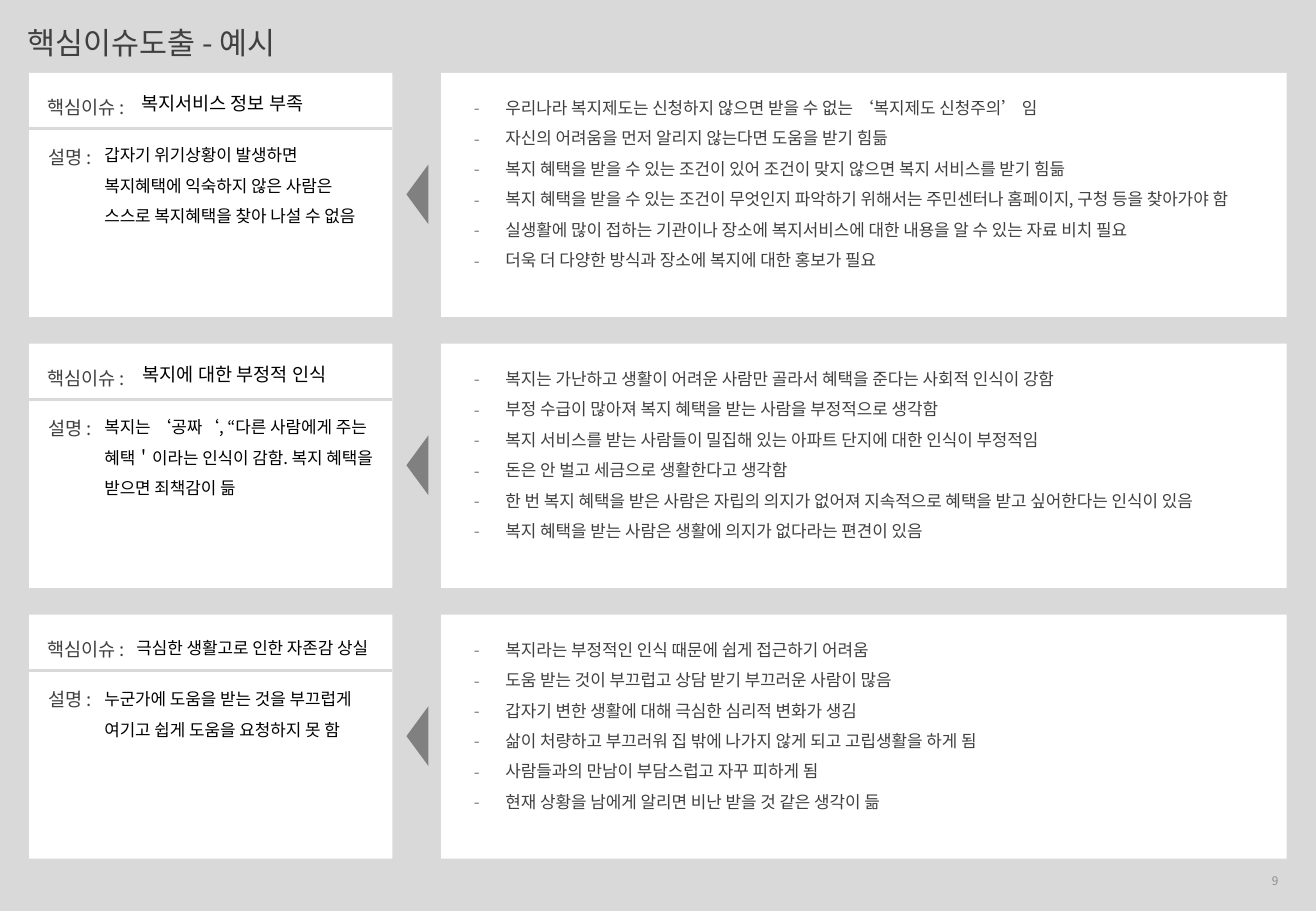
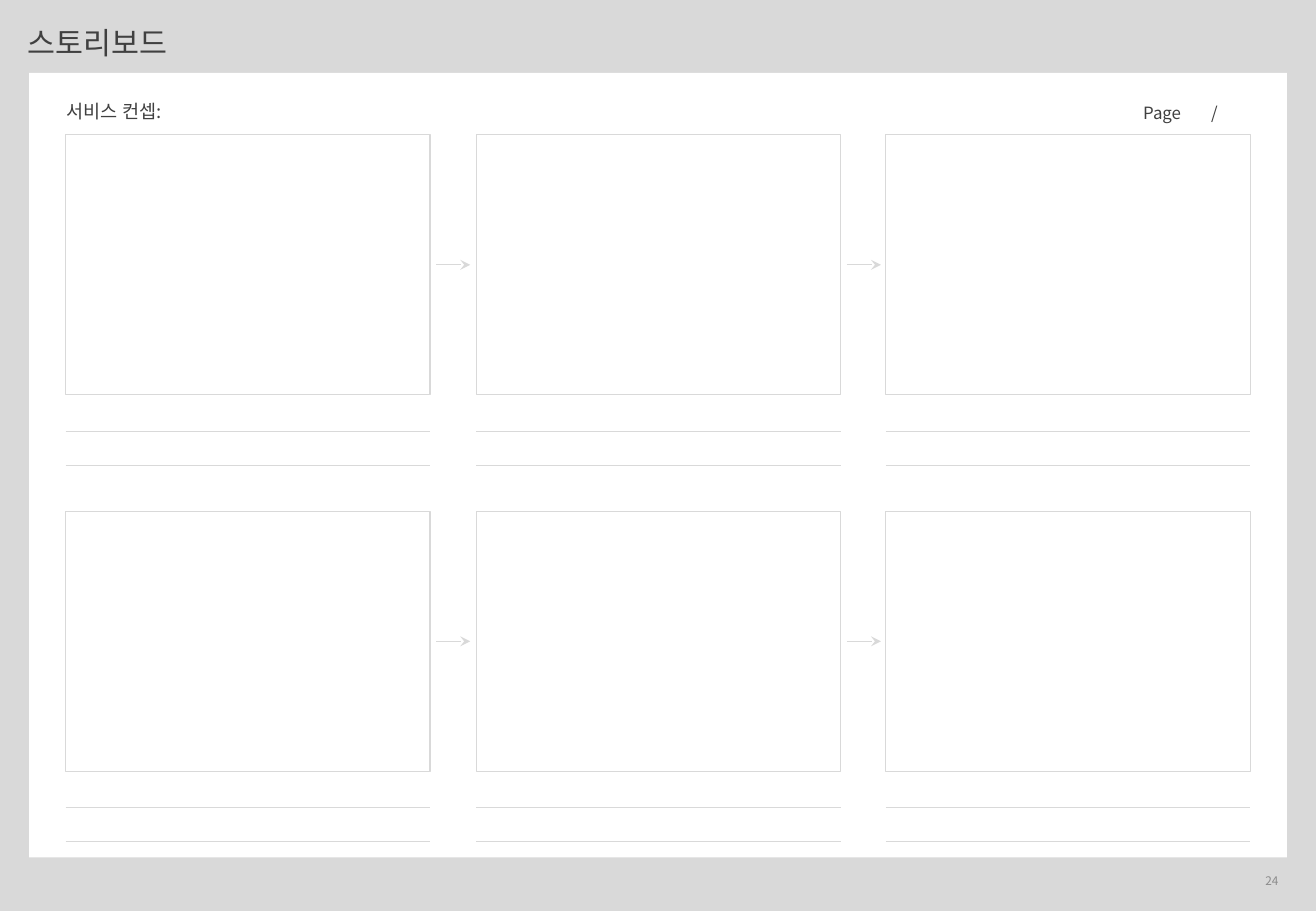
"""Build a key-issue example slide and a blank storyboard slide."""
from lxml.etree import SubElement
from pptx import Presentation
from pptx.dml.color import RGBColor
from pptx.enum.shapes import MSO_CONNECTOR, MSO_SHAPE
from pptx.enum.text import MSO_ANCHOR, MSO_AUTO_SIZE, PP_ALIGN
from pptx.oxml.ns import qn
from pptx.util import Pt

PX = 9144
FONT = "Noto Sans CJK KR"
GREY, WHITE, DARK, MID, BLACK = "D9D9D9", "FFFFFF", "404040", "808080", "000000"


def paint(fill, color):
    fill.solid()
    fill.fore_color.rgb = RGBColor.from_string(color)


def write(shape, text, size=10, color=DARK, align=PP_ALIGN.LEFT, spacing=1.5,
          wrap=False, anchor=MSO_ANCHOR.TOP, dash=None, tab=None):
    frame = shape.text_frame
    frame.text = text
    frame.word_wrap = wrap
    frame.auto_size = MSO_AUTO_SIZE.NONE
    frame.vertical_anchor = anchor
    for paragraph in frame.paragraphs:
        paragraph.alignment = align
        paragraph.line_spacing = spacing
        paragraph.space_before = Pt(0)
        props = paragraph._p.get_or_add_pPr()
        if dash:
            props.set("marL", str(26 * PX))
            props.set("indent", str(-26 * PX))
            SubElement(SubElement(props, qn("a:buClr")), qn("a:srgbClr"), val=dash)
            SubElement(props, qn("a:buFont"), typeface=FONT)
            SubElement(props, qn("a:buChar"), char="-")
        if tab:
            SubElement(SubElement(props, qn("a:tabLst")), qn("a:tab"),
                       pos=str(tab * PX), algn="l")
        for run in paragraph.runs:
            run.font.size = Pt(size)
            run.font.bold = False
            run.font.name = FONT
            paint(run.font.fill, color)
            SubElement(run._r.get_or_add_rPr(), qn("a:ea"), typeface=FONT)


issues = [
    ("복지서비스 정보 부족", 11, (103, 71, 160, 29),
     "갑자기 위기상황이 발생하면 복지혜택에 익숙하지 않은 사람은 스스로 복지혜택을 찾아 나설 수 없음",
     ["우리나라 복지제도는 신청하지 않으면 받을 수 없는 ‘복지제도 신청주의’ 임",
      "자신의 어려움을 먼저 알리지 않는다면 도움을 받기 힘듦",
      "복지 혜택을 받을 수 있는 조건이 있어 조건이 맞지 않으면 복지 서비스를 받기 힘듦",
      "복지 혜택을 받을 수 있는 조건이 무엇인지 파악하기 위해서는 주민센터나 홈페이지, 구청 등을 찾아가야 함",
      "실생활에 많이 접하는 기관이나 장소에 복지서비스에 대한 내용을 알 수 있는 자료 비치 필요",
      "더욱 더 다양한 방식과 장소에 복지에 대한 홍보가 필요"]),
    ("복지에 대한 부정적 인식", 11, (104, 294, 178, 29),
     "복지는 ‘공짜‘, “다른 사람에게 주는 혜택＇이라는 인식이 감함. 복지 혜택을 받으면 죄책감이 듦",
     ["복지는 가난하고 생활이 어려운 사람만 골라서 혜택을 준다는 사회적 인식이 강함",
      "부정 수급이 많아져 복지 혜택을 받는 사람을 부정적으로 생각함",
      "복지 서비스를 받는 사람들이 밀집해 있는 아파트 단지에 대한 인식이 부정적임",
      "돈은 안 벌고 세금으로 생활한다고 생각함",
      "한 번 복지 혜택을 받은 사람은 자립의 의지가 없어져 지속적으로 혜택을 받고 싶어한다는 인식이 있음",
      "복지 혜택을 받는 사람은 생활에 의지가 없다라는 편견이 있음"]),
    ("극심한 생활고로 인한 자존감 상실", 10, (98, 520, 219, 27),
     "누군가에 도움을 받는 것을 부끄럽게 여기고 쉽게 도움을 요청하지 못 함",
     ["복지라는 부정적인 인식 때문에 쉽게 접근하기 어려움",
      "도움 받는 것이 부끄럽고 상담 받기 부끄러운 사람이 많음",
      "갑자기 변한 생활에 대해 극심한 심리적 변화가 생김",
      "삶이 처량하고 부끄러워 집 밖에 나가지 않게 되고 고립생활을 하게 됨",
      "사람들과의 만남이 부담스럽고 자꾸 피하게 됨",
      "현재 상황을 남에게 알리면 비난 받을 것 같은 생각이 듦"]),
]

prs = Presentation()
prs.slide_width, prs.slide_height = 1083 * PX, 750 * PX
paint(prs.slide_master.background.fill, GREY)
example = prs.slides.add_slide(prs.slide_layouts[4])
storyboard = prs.slides.add_slide(prs.slide_layouts[5])

blocks, rules, notes = [], [], []
for slide, heading, width, number in ((example, "핵심이슈도출 - 예시", 240, "9"),
                                      (storyboard, "스토리보드", 139, "24")):
    title = slide.shapes.title
    title.left, title.top, title.width, title.height = 13 * PX, 0, width * PX, 56 * PX
    write(title, heading, size=18)
    notes.append((slide, (818, 702, 244, 40), number,
                  dict(size=7, color="8C8C8C", align=PP_ALIGN.RIGHT,
                       wrap=True, anchor=MSO_ANCHOR.MIDDLE)))

for row, (issue, size, issue_box, reason, evidence) in enumerate(issues):
    top = 60 + 223 * row
    blocks += [(example, MSO_SHAPE.RECTANGLE, (24, top, 299, 201), WHITE, 0),
               (example, MSO_SHAPE.RECTANGLE, (363, top, 696, 201), WHITE, 0),
               (example, MSO_SHAPE.ISOSCELES_TRIANGLE, (319, top + 91, 49, 18), MID, 270)]
    rules.append((example, (24, top + 46, 323, top + 46), 1.5, False))
    notes += [(example, (29, top + 5, 88, 38), "핵심이슈 :", dict(size=11)),
              (example, (30, top + 46, 58, 38), "설명 :", dict(size=11)),
              (example, issue_box, issue,
               dict(size=size, color=BLACK, align=PP_ALIGN.CENTER, spacing=1.0)),
              (example, (76, top + 46 + row, 241, 86), reason,
               dict(color=BLACK, wrap=True))]
    reasons = example.placeholders[row + 1]
    reasons.left, reasons.top = 380 * PX, (top + 7) * PX
    reasons.width, reasons.height = 675 * PX, 192 * PX
    write(reasons, "\n".join(evidence), wrap=True, dash=MID)
    example.shapes._spTree.append(reasons._element)

unused = example.placeholders[4]._element
unused.getparent().remove(unused)

blocks.append((storyboard, MSO_SHAPE.RECTANGLE, (24, 60, 1035, 646), WHITE, 0))
notes += [(storyboard, (45, 68, 102, 38), "서비스 컨셉:", dict(size=11)),
          (storyboard, (931, 71, 106, 35), "Page\t/", dict(wrap=True, tab=56))]
for top in (111, 421):
    for column in range(3):
        left = round(54 + 337.5 * column)
        blocks.append((storyboard, MSO_SHAPE.RECTANGLE, (left, top, 300, 214), None, 0))
        for y in (top + 244, top + 272):
            rules.append((storyboard, (left, y, left + 300, y), 0.75, False))
        if column < 2:
            rules.append((storyboard, (left + 305, top + 107, left + 333, top + 107),
                          0.75, True))

for slide, preset, box, color, turn in blocks:
    block = slide.shapes.add_shape(preset, *(PX * n for n in box))
    block.shadow.inherit = False
    block.rotation = turn
    if color:
        paint(block.fill, color)
        block.line.fill.background()
    else:
        block.fill.background()
        paint(block.line.fill, GREY)
        block.line.width = Pt(0.75)

for slide, ends, weight, arrow in rules:
    rule = slide.shapes.add_connector(MSO_CONNECTOR.STRAIGHT, *(PX * n for n in ends))
    paint(rule.line.fill, GREY)
    rule.line.width = Pt(weight)
    props = rule._element.spPr
    if arrow:
        SubElement(props.find(qn("a:ln")), qn("a:tailEnd"), type="stealth")
    SubElement(props, qn("a:effectLst"))

for slide, box, text, look in notes:
    write(slide.shapes.add_textbox(*(PX * n for n in box)), text, **look)

for row in range(len(issues)):
    example.shapes._spTree.append(example.placeholders[row + 1]._element)

prs.save("out.pptx")
